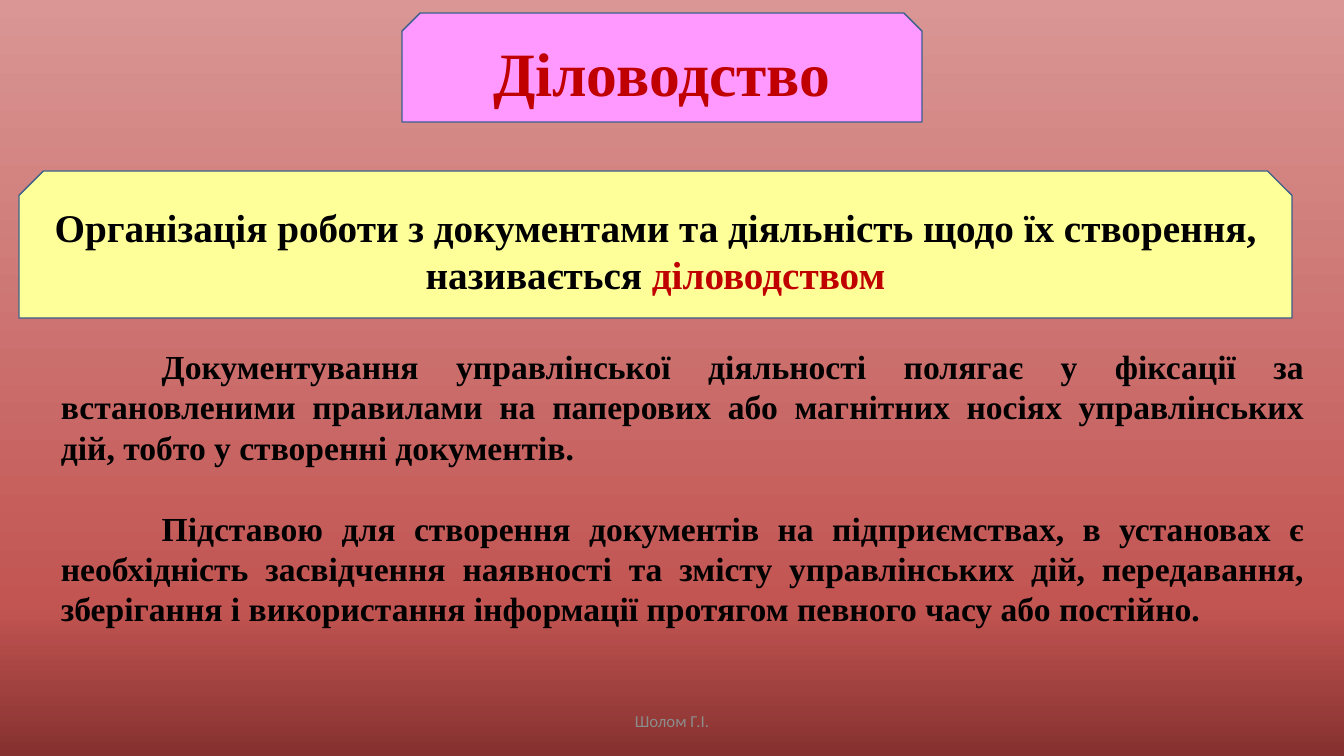
from copy import deepcopy
from pptx import Presentation
from pptx.dml.color import RGBColor
from pptx.enum.shapes import MSO_SHAPE
from pptx.enum.text import MSO_ANCHOR, PP_ALIGN
from pptx.oxml.ns import qn
from pptx.util import Emu, Pt

COLORS = {
    "dark": "85312F", "mid": "C25552", "light": "D99694",
    "pink": "FF99FF", "yellow": "FFFF99", "border": "3A5F8C",
    "red": "C00000", "black": "000000", "gray": "8C8C8C",
}
SERIF = "Times New Roman"


def px(*values):
    return [Emu(round(v * 914400 / 100.8)) for v in values]


def add_run(p, text, size, color, font=SERIF, bold=True):
    r = p.add_run()
    r.text = text
    r.font.name = font
    r.font.size = Pt(size)
    r.font.bold = bold
    r.font.color.rgb = RGBColor.from_string(COLORS[color])


prs = Presentation()
prs.slide_width, prs.slide_height = px(1344, 756)
s = prs.slides.add_slide(prs.slide_layouts[6])

fill = s.background.fill
fill.gradient()
fill.gradient_angle = 90
stops = s.element.find(".//" + qn("a:gsLst"))
stops.append(deepcopy(stops[-1]))
for stop, (position, color) in zip(
    fill.gradient_stops, [(0, "dark"), (0.2, "mid"), (1, "light")]
):
    stop.position = position
    stop.color.rgb = RGBColor.from_string(COLORS[color])

footer = s.shapes.add_textbox(*px(445, 701, 454, 40))
tf = footer.text_frame
tf.word_wrap = True
tf.vertical_anchor = MSO_ANCHOR.MIDDLE
p = tf.paragraphs[0]
p.alignment = PP_ALIGN.CENTER
add_run(p, "Шолом Г.І.", 12, "gray", "Calibri", False)

body = s.shapes.add_textbox(*px(51, 341, 1263, 295))
tf = body.text_frame
tf.word_wrap = True
paragraphs = [
    "Документування управлінської діяльності полягає у фіксації за встановленими "
    "правилами на паперових або магнітних носіях управлінських дій, тобто у "
    "створенні документів.",
    "Підставою для створення документів на підприємствах, в установах є "
    "необхідність засвідчення наявності та змісту управлінських дій, передавання, "
    "зберігання і використання інформації протягом певного часу або постійно.",
]
for i, text in enumerate(paragraphs):
    p = tf.add_paragraph() if i else tf.paragraphs[0]
    p.alignment = PP_ALIGN.JUSTIFY
    p.space_before = Pt(29 * i)
    pPr = p._p.get_or_add_pPr()
    pPr.set("marL", "0")
    pPr.set("indent", "914400")
    add_run(p, text, 24, "black")

banners = [
    ((19, 171, 1273, 147), "yellow", 28, [
        ("Організація роботи з документами та діяльність щодо їх створення, називається ", "black"),
        ("діловодством", "red"),
    ]),
    ((402, 13, 520, 109), "pink", 44, [("Діловодство", "red")]),
]
for box, color, size, runs in banners:
    sp = s.shapes.add_shape(MSO_SHAPE.SNIP_2_SAME_RECTANGLE, *px(*box))
    sp.shadow.inherit = False
    sp.fill.solid()
    sp.fill.fore_color.rgb = RGBColor.from_string(COLORS[color])
    sp.line.color.rgb = RGBColor.from_string(COLORS["border"])
    sp.line.width = Pt(1)
    tf = sp.text_frame
    tf.word_wrap = True
    tf.vertical_anchor = MSO_ANCHOR.MIDDLE
    p = tf.paragraphs[0]
    p.alignment = PP_ALIGN.CENTER
    for text, run_color in runs:
        add_run(p, text, size, run_color)

prs.save("out.pptx")
